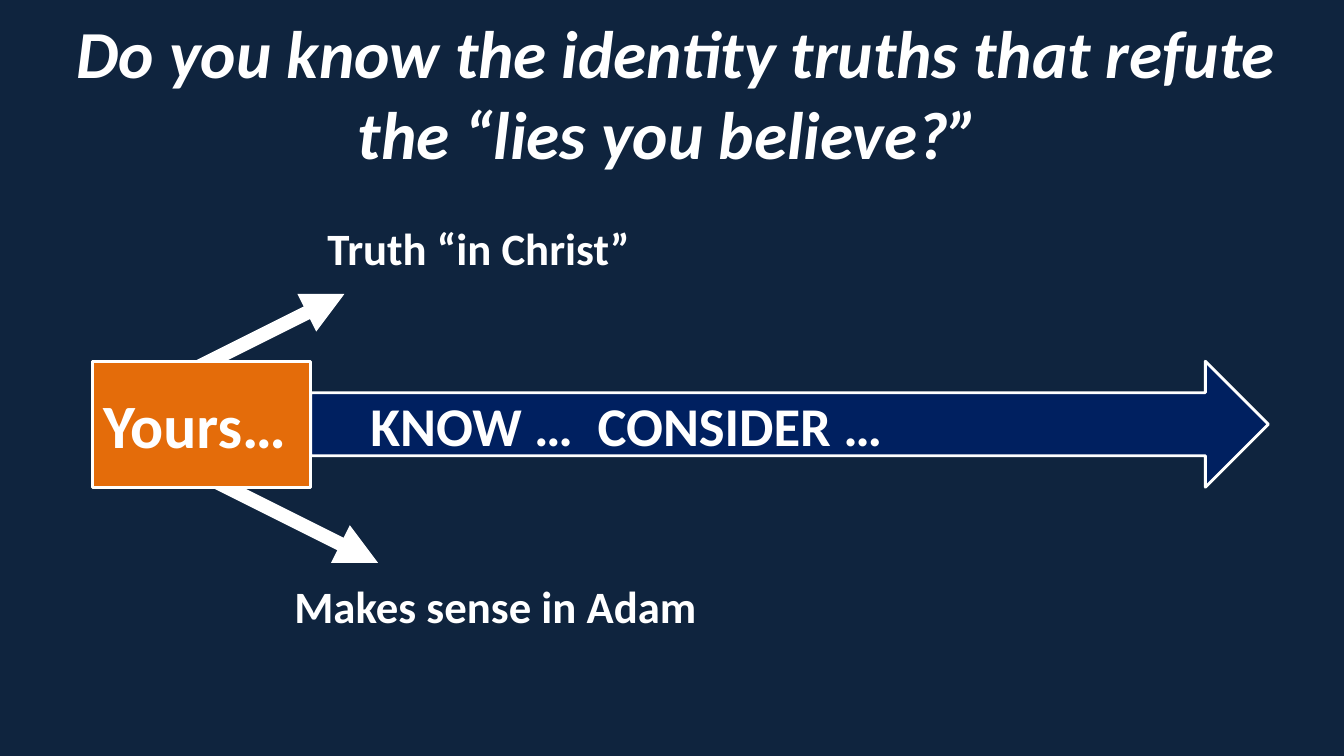
"""Builds the slide that sets truth in Christ against what makes sense in Adam."""
from lxml import etree
from pptx import Presentation
from pptx import oxml
from pptx import util as u
from pptx.dml.color import RGBColor
from pptx.enum import shapes, text

COLOURS = {"night": "0F243E", "white": "FFFFFF", "orange": "E46C0A", "navy": "002060"}


def colour(name):
    return RGBColor.from_string(COLOURS[name])


def write(frame, words, size, italic=False, align=text.PP_ALIGN.CENTER, left=7.2):
    frame.word_wrap = True
    frame.auto_size = text.MSO_AUTO_SIZE.NONE
    frame.vertical_anchor = text.MSO_ANCHOR.MIDDLE
    frame.margin_left = u.Pt(left)
    para = frame.paragraphs[0]
    para.alignment = align
    span = para.add_run()
    span.text = words
    font = span.font
    font.name, font.size, font.bold, font.italic = "Calibri", u.Pt(size), True, italic
    font.color.rgb = colour("white")


class Page:
    def __init__(self, deck):
        self.slide = deck.slides.add_slide(deck.slide_layouts[5])
        self.slide.background.fill.solid()
        self.slide.background.fill.fore_color.rgb = colour("night")

    def title(self, words, area, size):
        box = self.slide.shapes.title
        box.left, box.top, box.width, box.height = map(u.Pt, area)
        write(box.text_frame, words, size, italic=True)

    def label(self, words, area, size):
        box = self.slide.shapes.add_textbox(*map(u.Pt, area))
        write(box.text_frame, words, size)

    def block(self, kind, fill, words, area, size, **layout):
        box = self.slide.shapes.add_shape(kind, *map(u.Pt, area))
        box.shadow.inherit = False
        box.fill.solid()
        box.fill.fore_color.rgb = colour(fill)
        box.line.color.rgb = colour("white")
        box.line.width = u.Pt(2)
        write(box.text_frame, words, size, **layout)

    def arrow(self, start, end):
        line = self.slide.shapes.add_connector(
            shapes.MSO_CONNECTOR.STRAIGHT, *map(u.Pt, start + end))
        line.line.color.rgb = colour("white")
        line.line.width = u.Pt(10)
        head = etree.SubElement(line.line._get_or_add_ln(), oxml.ns.qn("a:tailEnd"))
        head.set("type", "triangle")
        etree.SubElement(line._element.spPr, oxml.ns.qn("a:effectLst"))


def main():
    deck = Presentation()
    deck.slide_width, deck.slide_height = u.Pt(960), u.Pt(540)
    page = Page(deck)
    page.title("Do you know the identity truths that refute the “lies you believe?” ",
               (12, 6, 942, 120), 48)
    page.arrow((126, 330), (270, 402))
    page.arrow((138, 264), (246, 210))
    page.block(shapes.MSO_SHAPE.RECTANGLE, "orange", "Yours… ", (66, 258, 156, 90), 44)
    page.block(shapes.MSO_SHAPE.RIGHT_ARROW, "navy", "KNOW …  CONSIDER …",
               (222, 258, 684, 90), 39, align=text.PP_ALIGN.LEFT, left=42.5)
    page.label("Makes sense in Adam", (126, 399.6, 456, 66), 32)
    page.label("Truth “in Christ”", (66, 144, 552, 66), 32)
    deck.save("out.pptx")


if __name__ == "__main__":
    main()
